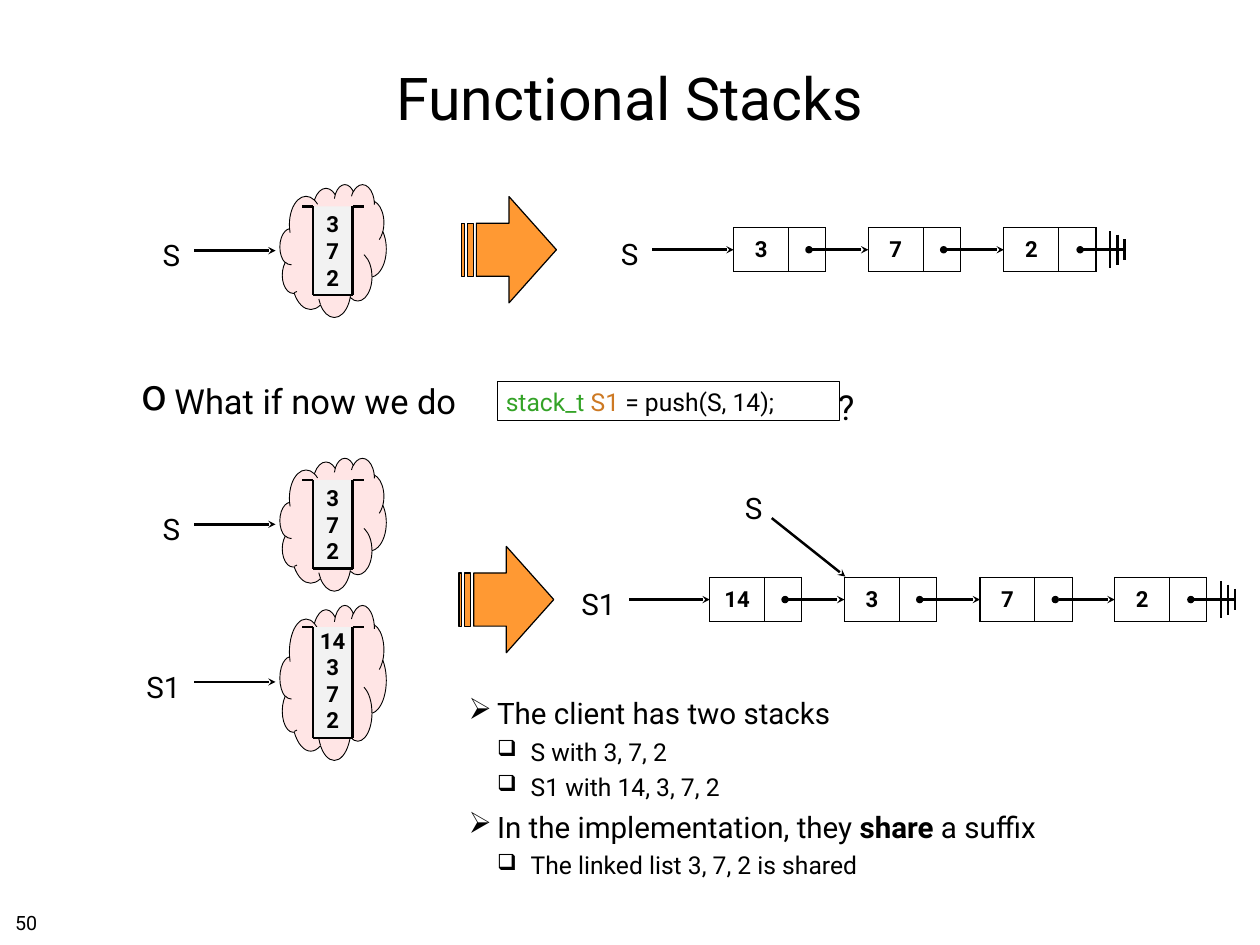
from dataclasses import dataclass

import lxml.etree
import pptx
import pptx.dml.color
import pptx.enum.shapes
import pptx.enum.text
import pptx.oxml.ns
import pptx.util

PX = 9144  # EMU in one px, 100 px to the inch
FONT = "Roboto"
COLORS = {
    "black": "000000", "cloud": "FFE5E5", "stack": "F2F2F2",
    "arrow": "FF9933", "type": "34A327", "variable": "CD7923",
}
SHAPE = pptx.enum.shapes.MSO_SHAPE
ALIGN = pptx.enum.text.PP_ALIGN
ANCHOR = pptx.enum.text.MSO_ANCHOR


@dataclass
class Stack:
    name: str
    top: int
    values: list[str]


@dataclass
class LinkedList:
    name: str
    left: int
    top: int
    pointer_left: int
    values: list[str]


@dataclass
class Bullet:
    symbol: str
    symbol_size: int  # percent of the text
    indent: int
    hanging: int
    space_before: float
    size: int


@dataclass
class Run:
    text: str
    color: str = "black"
    bold: bool = False


QUESTION = Bullet("o", 125, 88, 38, 7, 28)
POINT = Bullet("➢", 100, 119, 32, 6, 24)
DETAIL = Bullet("❑", 90, 157, 38, 4.8, 20)

STACKS = [
    Stack("S", 208, ["3", "7", "2"]),
    Stack("S", 517, ["3", "7", "2"]),
    Stack("S1", 683, ["14", "3", "7", "2"]),
]
LISTS = [
    LinkedList("S", 828, 257, 736, ["3", "7", "2"]),
    LinkedList("S1", 801, 652, 710, ["14", "3", "7", "2"]),
]
STEP_ARROWS = [(521, 222), (518, 617)]
CONCLUSIONS = [
    (POINT, [Run("The client has two stacks")]),
    (DETAIL, [Run("S with 3, 7, 2")]),
    (DETAIL, [Run("S1 with 14, 3, 7, 2")]),
    (POINT, [Run("In the implementation, they "), Run("share", bold=True), Run(" a suffix")]),
    (DETAIL, [Run("The linked list 3, 7, 2 is shared")]),
]


def px(*lengths: int) -> list[int]:
    return [length * PX for length in lengths]


def rgb(name: str):
    return pptx.dml.color.RGBColor.from_string(COLORS[name])


def add_child(parent, tag: str, **attributes: str):
    return lxml.etree.SubElement(parent, pptx.oxml.ns.qn(tag), attributes)


def format_text(text_frame, size: int, bold=False, align=ALIGN.LEFT, color="black") -> None:
    for paragraph in text_frame.paragraphs:
        paragraph.alignment = align
        for run in paragraph.runs:
            format_run(run, size, color, bold)


def format_run(run, size: int, color: str, bold: bool) -> None:
    run.font.name, run.font.size, run.font.bold = FONT, pptx.util.Pt(size), bold
    run.font.color.rgb = rgb(color)


def fill_runs(paragraph, runs: list[Run], size: int) -> None:
    for item in runs:
        run = paragraph.add_run()
        run.text = item.text
        format_run(run, size, item.color, item.bold)


def set_margins(text_frame, margin: int) -> None:
    text_frame.margin_left = text_frame.margin_right = margin * PX
    text_frame.margin_top = text_frame.margin_bottom = margin * PX


def add_text(slide, box: tuple, text: str, size: int, align=ALIGN.LEFT, margin=6, wrap=False):
    text_frame = slide.shapes.add_textbox(*px(*box)).text_frame
    text_frame.word_wrap = wrap
    set_margins(text_frame, margin)
    text_frame.text = text
    format_text(text_frame, size, align=align)
    return text_frame


def add_bullets(slide, box: tuple, items: list) -> None:
    text_frame = add_text(slide, box, "", 24, wrap=True)
    for index, (bullet, runs) in enumerate(items):
        paragraph = text_frame.add_paragraph() if index else text_frame.paragraphs[0]
        paragraph.space_before = pptx.util.Pt(bullet.space_before)
        fill_runs(paragraph, runs, bullet.size)
        properties = paragraph._p.get_or_add_pPr()
        properties.set("marL", str(bullet.indent * PX))
        properties.set("indent", str(-bullet.hanging * PX))
        add_child(properties, "a:buSzPct", val=str(bullet.symbol_size * 1000))
        add_child(properties, "a:buChar", char=bullet.symbol)


def add_shape(slide, kind, box: tuple, fill=None, line_width=0.0):
    shape = slide.shapes.add_shape(kind, *px(*box))
    shape.shadow.inherit = False
    if fill:
        shape.fill.solid()
        shape.fill.fore_color.rgb = rgb(fill)
    else:
        shape.fill.background()
    if line_width:
        shape.line.color.rgb = rgb("black")
        shape.line.width = pptx.util.Pt(line_width)
    else:
        shape.line.fill.background()
    return shape


def add_line(slide, start: tuple, end: tuple, head="", tail="") -> None:
    connector = slide.shapes.add_connector(
        pptx.enum.shapes.MSO_CONNECTOR.STRAIGHT, *px(*start, *end))
    connector.line.color.rgb = rgb("black")
    connector.line.width = pptx.util.Pt(2)
    line = connector.line._get_or_add_ln()
    for tag, kind in (("a:headEnd", head), ("a:tailEnd", tail)):
        if kind:
            add_child(line, tag, type=kind)
    add_child(connector._element.spPr, "a:effectLst")


def add_pointer(slide, name: str, left: int, right: int, y: int) -> None:
    width = 43 if len(name) == 1 else 61
    add_text(slide, (left - 4 - width, y - 25, width, 50), name, 24, ALIGN.CENTER, 10)
    add_line(slide, (left, y), (right, y), tail="stealth")


def add_stack(slide, stack: Stack) -> None:
    depth = 25 * (len(stack.values) + 1)
    add_shape(slide, SHAPE.CLOUD, (316, stack.top, 120, depth + 50), "cloud", 0.75)
    left, right, top = 353, 398, stack.top + 25
    bottom = top + depth
    body = add_shape(slide, SHAPE.RECTANGLE, (left, top, right - left, depth), "stack")
    text_frame = body.text_frame
    set_margins(text_frame, 6)
    text_frame.margin_bottom = 5 * PX
    text_frame.vertical_anchor = ANCHOR.BOTTOM
    text_frame.text = "\n".join(stack.values)
    format_text(text_frame, 18, True, ALIGN.CENTER)
    outline = [(left - 12, top), (left, top), (left, bottom),
               (right, bottom), (right, top), (right + 13, top)]
    for start, end in zip(outline, outline[1:]):
        add_line(slide, start, end)
    add_pointer(slide, stack.name, 219, 311, stack.top + (depth + 50) // 2)


def add_node(slide, left: int, top: int, value: str) -> None:
    table = slide.shapes.add_table(1, 2, *px(left, top, 104, 50)).table
    table.first_row = table.horz_banding = False
    table.columns[0].width, table.columns[1].width = px(62, 42)
    for cell, text in zip(table.iter_cells(), (value, "")):
        cell.text_frame.text = text
        cell.vertical_anchor = ANCHOR.MIDDLE
        format_text(cell.text_frame, 18, True, ALIGN.CENTER)
        properties = cell._tc.get_or_add_tcPr()
        for side in "LRTB":
            border = add_child(properties, f"a:ln{side}", w=str(pptx.util.Pt(1)))
            add_child(add_child(border, "a:solidFill"), "a:srgbClr", val=COLORS["black"])
        cell.fill.background()


def add_linked_list(slide, chain: LinkedList) -> None:
    y = chain.top + 25
    lefts = [chain.left + index * 305 // 2 for index in range(len(chain.values))]
    for left, value in zip(lefts, chain.values):
        add_node(slide, left, chain.top, value)
    for left, following in zip(lefts, lefts[1:]):
        add_line(slide, (left + 85, y), (following, y), "oval", "stealth")
    # Ground sign that ends the list
    last = lefts[-1]
    add_line(slide, (last + 86, y), (last + 136, y), "oval")
    for offset, half in ((120, 21), (128, 17), (136, 12)):
        add_line(slide, (last + offset, y - half), (last + offset, y + half))
    add_pointer(slide, chain.name, chain.pointer_left, chain.left, y)


def main() -> None:
    presentation = pptx.Presentation()
    presentation.slide_width, presentation.slide_height = px(1422, 1067)
    slide = presentation.slides.add_slide(presentation.slide_layouts[6])

    # Title and question
    title = add_text(slide, (104, 28, 1214, 164), "Functional Stacks", 48, ALIGN.CENTER, wrap=True)
    title.vertical_anchor = ANCHOR.MIDDLE
    add_bullets(slide, (103, 423, 1214, 60), [(QUESTION, [Run("What if now we do")])])
    add_text(slide, (940, 430, 30, 57), "?", 28)
    code = add_shape(slide, SHAPE.RECTANGLE, (561, 431, 386, 44), line_width=0.75).text_frame
    code.paragraphs[0].alignment = ALIGN.LEFT
    fill_runs(code.paragraphs[0], [
        Run("stack_t ", "type"), Run("S1", "variable"), Run(" = push(S, 14);")], 20)

    # Abstract stacks, and the lists that implement them
    for left, top in STEP_ARROWS:
        add_shape(slide, SHAPE.STRIPED_RIGHT_ARROW, (left, top, 107, 120), "arrow", 1)
    for stack in STACKS:
        add_stack(slide, stack)
    for chain in LISTS:
        add_linked_list(slide, chain)
    add_text(slide, (829, 543, 43, 50), "S", 24, ALIGN.CENTER, 10)
    add_line(slide, (871, 585), (954, 651), tail="stealth")

    # Conclusions and page number
    add_bullets(slide, (436, 779, 950, 246), CONCLUSIONS)
    add_text(slide, (11, 1023, 37, 35), "50", 16)
    presentation.save("out.pptx")


if __name__ == "__main__":
    main()
